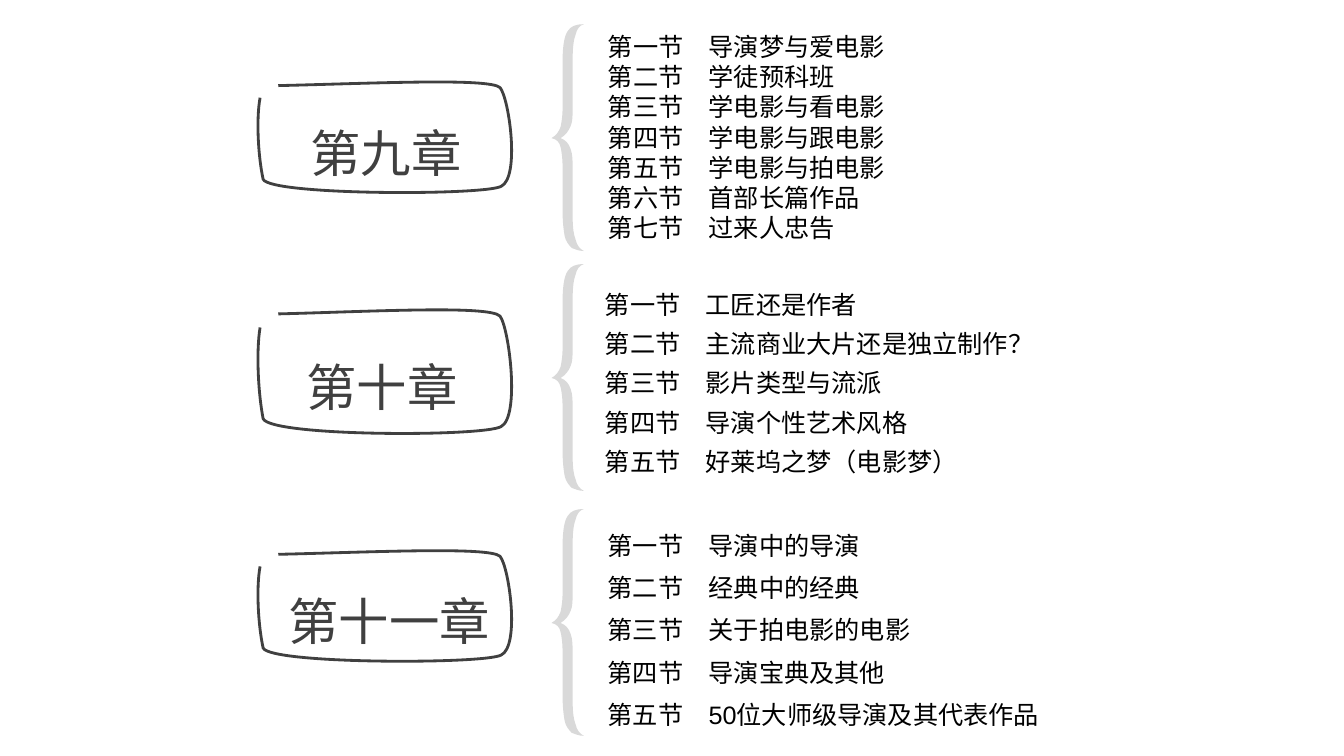
import lxml.etree
import pptx
import pptx.dml.color
import pptx.enum.text
import pptx.oxml.ns
import pptx.util

Inches = pptx.util.Inches
DARK = pptx.dml.color.RGBColor(0x40, 0x40, 0x40)
BLACK = pptx.dml.color.RGBColor(0, 0, 0)
GREY = pptx.dml.color.RGBColor(0xD9, 0xD9, 0xD9)

# Outlines in inches from their top left corner: a start point, then
# segments of one point (line) or three points (cubic curve).
FRAME = [
    [(0.2, 0.04)],
    [(1.09, 0.02), (2.3, -0.04), (2.4, 0.06)],
    [(2.49, 0.17), (2.6, 0.95), (2.41, 1.04)],
    [(2.23, 1.13), (0.13, 1.13), (0.05, 0.97)],
    [(0, 0.74), (-0.02, 0.37), (0.02, 0.16)],
]
BRACE = [
    [(0.21, 0.33)],
    [(0.21, 0.23), (0.22, 0.15), (0.24, 0.1)],
    [(0.25, 0.05), (0.28, 0.01), (0.32, 0)],
    [(0.24, 0), (0.19, 0.02), (0.16, 0.07)],
    [(0.13, 0.11), (0.11, 0.21), (0.11, 0.36)],
    [(0.11, 0.82)] * 3,
    [(0.11, 0.91), (0.1, 0.97), (0.09, 1.02)],
    [(0.07, 1.07), (0.05, 1.1), (0, 1.13)],
    [(0.05, 1.14), (0.08, 1.17), (0.09, 1.22)],
    [(0.1, 1.26), (0.11, 1.33), (0.11, 1.43)],
    [(0.11, 1.86)] * 3,
    [(0.11, 1.96), (0.12, 2.04), (0.13, 2.1)],
    [(0.14, 2.15), (0.17, 2.19), (0.2, 2.22)],
    [(0.23, 2.23), (0.27, 2.25), (0.32, 2.25)],
    [(0.28, 2.23), (0.25, 2.19), (0.24, 2.14)],
    [(0.22, 2.09), (0.21, 2.02), (0.21, 1.92)],
    [(0.21, 1.49)] * 3,
    [(0.21, 1.37), (0.21, 1.29), (0.19, 1.24)],
    [(0.17, 1.18), (0.14, 1.15), (0.09, 1.13)],
    [(0.14, 1.1), (0.17, 1.06), (0.19, 1.01)],
    [(0.21, 0.97), (0.21, 0.89), (0.21, 0.78)],
    [(0.21, 0.33)],
]

# Title, its box, top and height of its frame
HEADS = [
    (" 第九章", (2.87, 0.86, 2.14, 1.01), 0.81, 1.1),
    (" 第十章", (2.83, 3.18, 2.21, 1.01), 3.07, 1.23),
    (" 第十一章", (2.65, 5.51, 2.36, 1.01), 5.46, 1.1),
]
# Brace top, list box, line spacing, items
LISTS = [
    (2.62, (5.9, 2.73, 6.91, 2.07), 1.3,
     ["工匠还是作者", "主流商业大片还是独立制作？", "影片类型与流派",
      "导演个性艺术风格", "好莱坞之梦（电影梦）"]),
    (5.05, (5.93, 5.09, 6.67, 2.58), 1.4,
     ["导演中的导演", "经典中的经典", "关于拍电影的电影",
      "导演宝典及其他", "50位大师级导演及其代表作品"]),
    (0.24, (5.93, 0.26, 5.01, 2.22), None,
     ["导演梦与爱电影", "学徒预科班", "学电影与看电影", "学电影与跟电影",
      "学电影与拍电影", "首部长篇作品", "过来人忠告"]),
]


def write(para, text, size=18, color=BLACK, font="Arial", space=None):
    para.line_spacing = space
    run = para.add_run()
    run.text = text
    run.font.size = pptx.util.Pt(size)
    run.font.name = font
    run.font.color.rgb = color


class Deck:
    def __init__(self):
        self.show = pptx.Presentation()
        self.show.slide_width = Inches(13.33)
        self.show.slide_height = Inches(7.5)
        self.slide = self.show.slides.add_slide(self.show.slide_layouts[6])

    def shape(self, parts, box, stretch=1, close=False):
        """Add a freeform with the given box and fill its path with curves."""
        left, top, width, height = map(Inches, box)
        pen = self.slide.shapes.build_freeform(left, top)
        pen.add_line_segments([(left + width, top + height)], close=False)
        form = pen.convert_to_shape()
        form.shadow.inherit = False
        qn = pptx.oxml.ns.qn
        track = form.element.spPr.find(".//" + qn("a:path"))
        for node in list(track):
            track.remove(node)
        for index, part in enumerate(parts):
            kind = "cubicBezTo" if len(part) == 3 else "lnTo"
            step = lxml.etree.SubElement(
                track, qn("a:" + (kind if index else "moveTo")))
            for x, y in part:
                lxml.etree.SubElement(step, qn("a:pt"), x=str(Inches(x)),
                                      y=str(Inches(y * stretch)))
        if close:
            lxml.etree.SubElement(track, qn("a:close"))
        return form

    def frame(self, top, height):
        form = self.shape(FRAME, (2.56, top, 2.52, height), height / 1.1)
        form.fill.background()
        form.line.color.rgb = DARK
        form.line.width = pptx.util.Pt(2)

    def brace(self, top):
        form = self.shape(BRACE, (5.47, top, 0.32, 2.25), close=True)
        form.fill.solid()
        form.fill.fore_color.rgb = GREY
        form.line.fill.background()

    def text(self, box, lines, **style):
        frame = self.slide.shapes.add_textbox(*map(Inches, box)).text_frame
        frame.word_wrap = True
        frame.auto_size = pptx.enum.text.MSO_AUTO_SIZE.SHAPE_TO_FIT_TEXT
        for index, line in enumerate(lines):
            para = frame.add_paragraph() if index else frame.paragraphs[0]
            write(para, line, **style)


def main():
    deck = Deck()
    for title, box, top, height in HEADS:
        deck.frame(top, height)
        deck.text(box, [title], size=36, color=DARK, space=1.5)
    for top, box, space, items in LISTS:
        deck.brace(top)
        lines = [f"第{num}节\t{item}" for num, item in zip("一二三四五六七", items)]
        deck.text(box, lines, space=space)
    deck.show.save("out.pptx")


if __name__ == "__main__":
    main()
